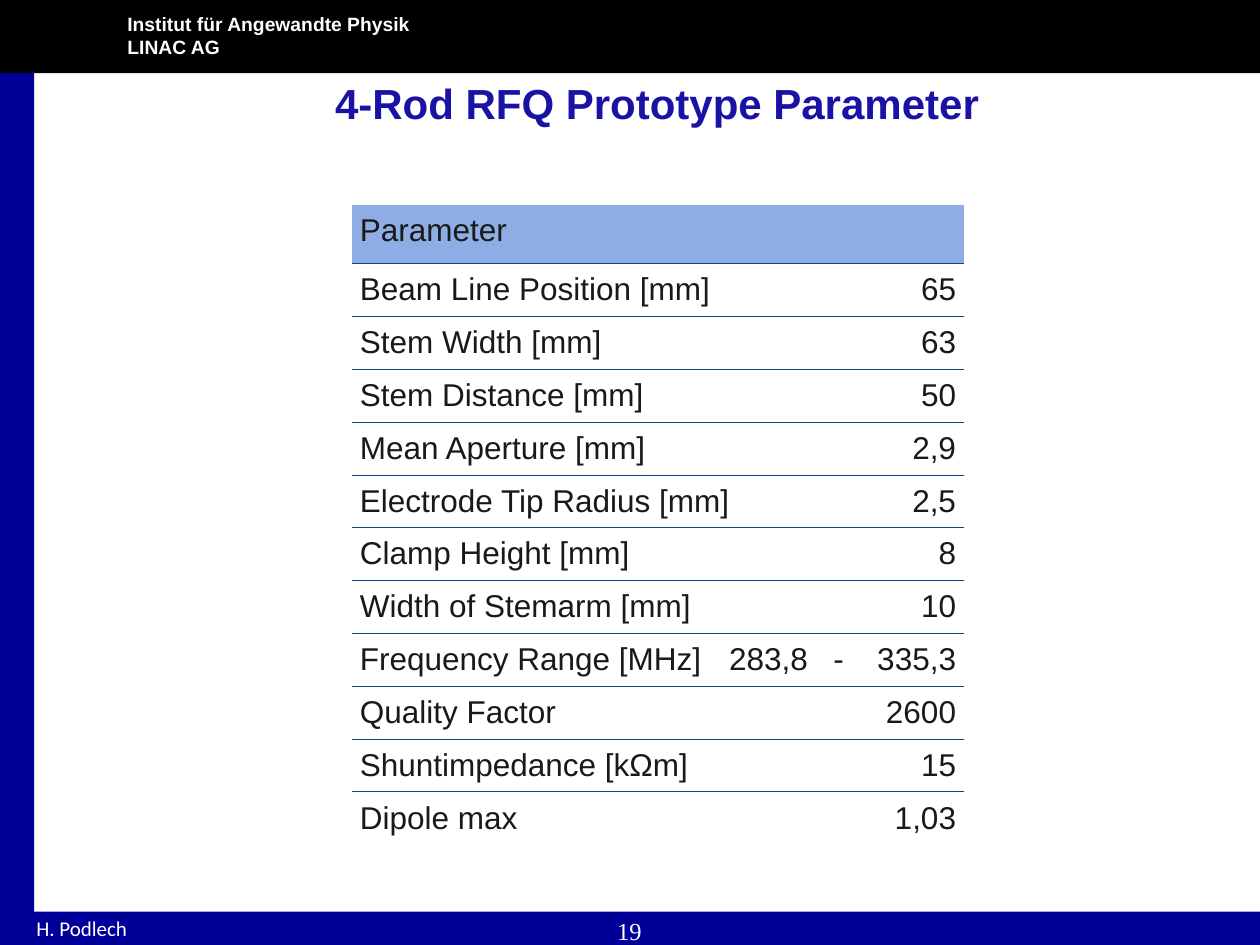
from dataclasses import dataclass
from typing import Optional

from lxml.etree import SubElement
from pptx import Presentation
from pptx.dml.color import RGBColor
from pptx.enum.shapes import MSO_SHAPE
from pptx.enum.text import MSO_ANCHOR, PP_ALIGN
from pptx.oxml import parse_xml
from pptx.oxml.ns import nsdecls, qn
from pptx.util import Pt

COLORS = {
    "navy": "000099",
    "black": "000000",
    "white": "FFFFFF",
    "title": "1A11A5",
    "text": "191919",
    "header": "8EADE4",
    "rule": "09478B",
}


@dataclass(frozen=True)
class Bar:
    left: float
    top: float
    width: float
    height: float
    color: str


@dataclass(frozen=True)
class Row:
    label: str
    value: str
    start: Optional[str] = None


BARS = [
    Bar(-0.7, 0, 20.2, 540, "navy"),
    Bar(0, 0, 720, 41.8, "black"),
    Bar(0, 521, 720, 19.4, "navy"),
]

ROWS = [
    Row("Parameter", ""),
    Row("Beam Line Position [mm]", "65"),
    Row("Stem Width [mm]", "63"),
    Row("Stem Distance [mm]", "50"),
    Row("Mean Aperture [mm]", "2,9"),
    Row("Electrode Tip Radius [mm]", "2,5"),
    Row("Clamp Height [mm]", "8"),
    Row("Width of Stemarm [mm]", "10"),
    Row("Frequency Range [MHz]", "335,3", "283,8\t-"),
    Row("Quality Factor", "2600"),
    Row("Shuntimpedance [kΩm]", "15"),
    Row("Dipole max", "1,03"),
]
COLUMN_WIDTHS = [211, 82.8, 55.4]
HEADER_HEIGHT, ROW_HEIGHT = 33.1, 28.1
CELL_MARGIN = 4.3
DASH_TAB = 59.5


def write_text(frame, text: str, *, size: float, color: str, font: str = "Arial",
               bold: bool = False, align=PP_ALIGN.LEFT, tab: Optional[float] = None) -> None:
    for index, line in enumerate(text.split("\n")):
        para = frame.paragraphs[0] if index == 0 else frame.add_paragraph()
        para.alignment = align
        if tab is not None:
            stops = SubElement(para._p.get_or_add_pPr(), qn("a:tabLst"))
            SubElement(stops, qn("a:tab"), pos=str(int(Pt(tab))), algn="l")
        span = para.add_run()
        span.text = line
        span.font.name = font
        span.font.size = Pt(size)
        span.font.bold = bold
        span.font.color.rgb = RGBColor.from_string(COLORS[color])


def add_bar(page, bar: Bar) -> None:
    shape = page.shapes.add_shape(MSO_SHAPE.RECTANGLE, Pt(bar.left), Pt(bar.top),
                                  Pt(bar.width), Pt(bar.height))
    shape.shadow.inherit = False
    shape.fill.solid()
    shape.fill.fore_color.rgb = RGBColor.from_string(COLORS[bar.color])
    shape.line.fill.background()


def add_text(page, text: str, left: float, top: float, width: float, height: float,
             margins: tuple[float, float] = (7.2, 3.6), **style) -> None:
    box = page.shapes.add_textbox(Pt(left), Pt(top), Pt(width), Pt(height))
    frame = box.text_frame
    frame.word_wrap = True
    frame.margin_left = frame.margin_right = Pt(margins[0])
    frame.margin_top = frame.margin_bottom = Pt(margins[1])
    write_text(frame, text, **style)


def set_borders(cell, top: bool, bottom: bool) -> None:
    sides = {"lnL": False, "lnR": False, "lnT": top, "lnB": bottom}
    properties = cell._tc.get_or_add_tcPr()
    for position, (side, visible) in enumerate(sides.items()):
        fill = (f'<a:solidFill><a:srgbClr val="{COLORS["rule"]}"/></a:solidFill>'
                if visible else "<a:noFill/>")
        width = int(Pt(0.25))
        properties.insert(position, parse_xml(
            f'<a:{side} {nsdecls("a")} w="{width}">{fill}</a:{side}>'))


def add_parameter_table(page, left: float, top: float) -> None:
    height = HEADER_HEIGHT + ROW_HEIGHT * (len(ROWS) - 1)
    table = page.shapes.add_table(len(ROWS), len(COLUMN_WIDTHS), Pt(left), Pt(top),
                                  Pt(sum(COLUMN_WIDTHS)), Pt(height)).table
    table.first_row = table.horz_banding = False
    for column, width in zip(table.columns, COLUMN_WIDTHS):
        column.width = Pt(width)
    for index, row in enumerate(ROWS):
        is_header = index == 0
        table.rows[index].height = Pt(HEADER_HEIGHT if is_header else ROW_HEIGHT)
        for number, text in enumerate((row.label, row.start, row.value)):
            cell = table.cell(index, number)
            cell.margin_left = cell.margin_right = Pt(CELL_MARGIN)
            cell.margin_top = cell.margin_bottom = Pt(CELL_MARGIN)
            cell.vertical_anchor = MSO_ANCHOR.TOP if is_header else MSO_ANCHOR.MIDDLE
            if is_header:
                cell.fill.solid()
                cell.fill.fore_color.rgb = RGBColor.from_string(COLORS["header"])
            else:
                cell.fill.background()
            set_borders(cell, top=not is_header, bottom=index < len(ROWS) - 1)
            if text:
                write_text(cell.text_frame, text, size=18, color="text",
                           align=PP_ALIGN.RIGHT if number == 2 else PP_ALIGN.LEFT,
                           tab=DASH_TAB if "\t" in text else None)
        if row.start is None:
            table.cell(index, 0).merge(table.cell(index, 1))


def main() -> None:
    deck = Presentation()
    deck.slide_width, deck.slide_height = Pt(720), Pt(540)
    page = deck.slides.add_slide(deck.slide_layouts[6])
    for bar in BARS:
        add_bar(page, bar)
    add_text(page, "Institut für Angewandte Physik\nLINAC AG", 70.6, 6.5, 184.3, 28.1,
             margins=(2.2, 0.7), size=11, color="white", bold=True)
    add_text(page, "H. Podlech", 19.4, 522.7, 136, 19.4,
             margins=(1.4, 0.7), size=12, color="white", font="Calibri")
    add_text(page, "19", 316.8, 519.8, 85.7, 16.6, size=14, color="white",
             font="Times New Roman", align=PP_ALIGN.CENTER)
    add_text(page, "4-Rod RFQ Prototype Parameter", 96.5, 41, 558, 36,
             size=24, color="title", bold=True, align=PP_ALIGN.CENTER)
    add_parameter_table(page, 201.4, 117.4)
    deck.save("out.pptx")


if __name__ == "__main__":
    main()
